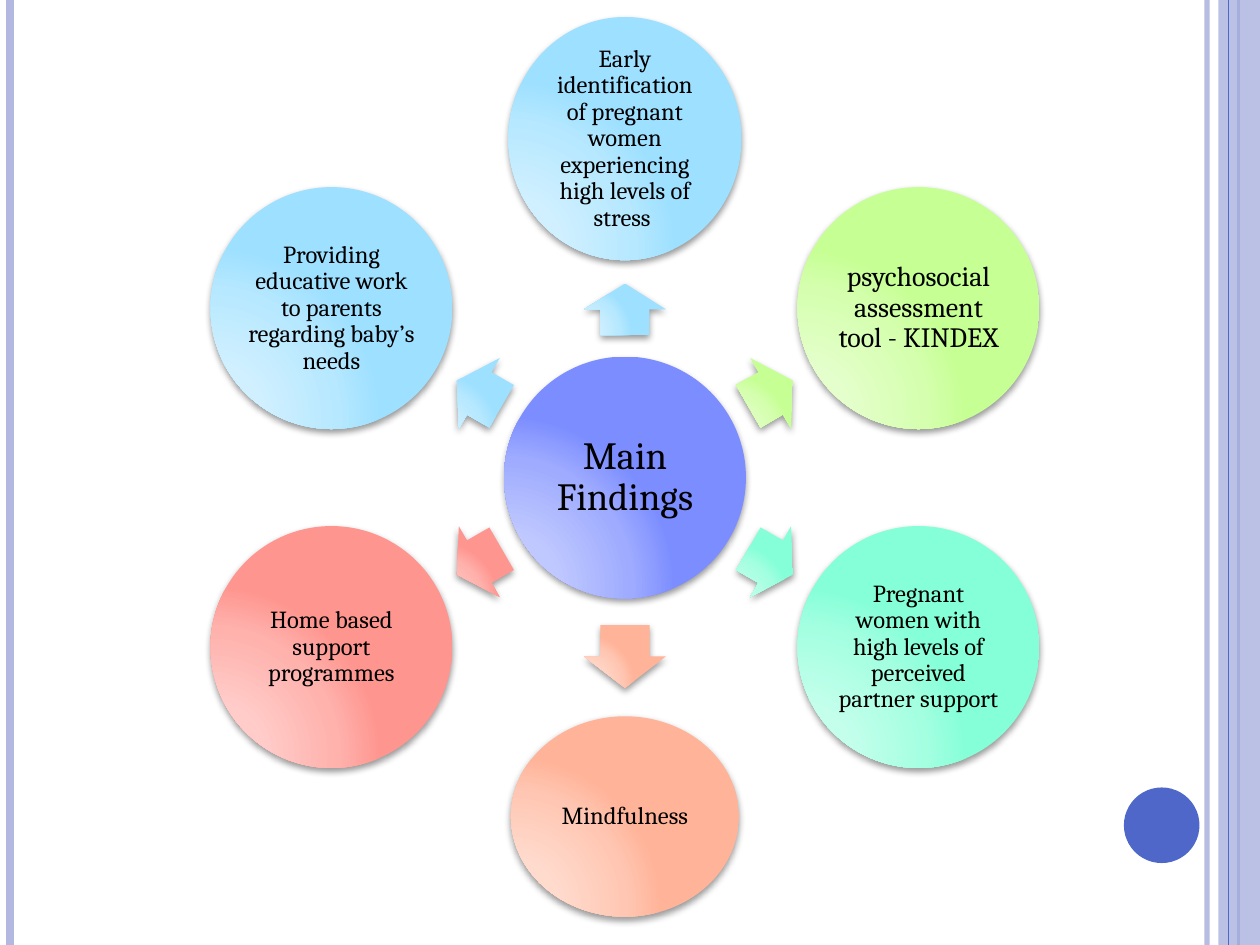
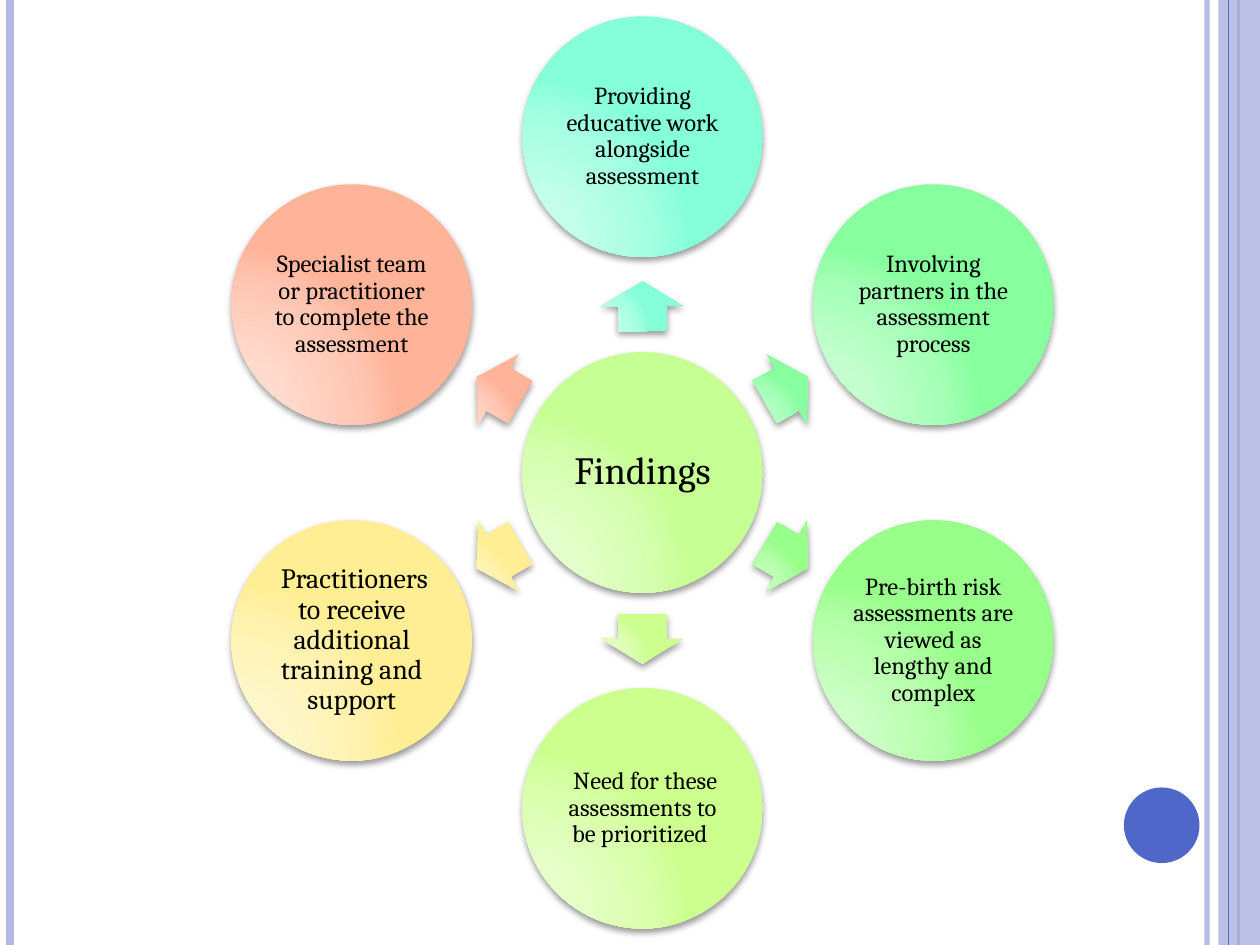
from dataclasses import dataclass
from math import cos, radians, sin

from lxml.etree import SubElement
from pptx import Presentation
from pptx.dml.color import RGBColor
from pptx.enum.shapes import MSO_CONNECTOR as Link, MSO_SHAPE as Form
from pptx.enum.text import MSO_ANCHOR as Anchor, PP_ALIGN as Align
from pptx.oxml import parse_xml
from pptx.oxml.ns import nsdecls, qn
from pptx.util import Emu, Inches, Pt

# Grid of 100 columns by 75 rows
COLS, ROWS = 100, 75
CELL = Inches(0.1)

# Shared look
PALE, BLUE = "B2B8E0", "4E67C8"
SKY, LIME, MINT = "9DE0FF", "C6FF93", "84FFD7"
PEACH, ROSE, IRIS = "FFB398", "FF958F", "7C8EFF"
LEAF, GREEN, PEAR, SAND = "87FF9E", "98FF8A", "CCFF8E", "FFEE93"
TINTS = {0: 0.44, 30: 0.48, 75: 0.74, 100: 1}
INNER = 0.71  # text area as a share of its circle
FRAME = {"word_wrap": True, "vertical_anchor": Anchor.MIDDLE}
SIDES = ("left", "right", "top", "bottom")
PARA = {"alignment": Align.CENTER, "line_spacing": 0.9}


@dataclass
class Rule:
    col: float
    width: float
    color: str
    alpha: int = 100


@dataclass
class Node:
    """A circle on the ring; zero sizes mean the ring's own."""
    text: str
    color: str
    size: int = 14
    wide: float = 0
    high: float = 0
    shaft: float = 0
    reach: float = 0
    lead: str = ""


@dataclass
class Ring:
    col: float
    row: float
    disc: float
    orbit: float
    reach: float
    shaft: float
    hub: Node
    nodes: list[Node]


RULES = [Rule(95.8, 3, PALE, 93), Rule(0.8, 4.5, PALE), Rule(98.3, 1.5, BLUE)]
EDGE = Rule(97.5, 0.75, BLUE)

RINGS = [
    Ring(49.6, 37.9, 19.2, 26.9, 13.35, 4.1, Node("Main Findings", IRIS, 22), [
        Node("Early identification of pregnant women experiencing high levels "
             "of stress ", SKY, wide=18.5, high=19.3),
        Node("psychosocial assessment tool - KINDEX", LIME, 16),
        Node("Pregnant women with high levels of perceived partner support",
             MINT),
        Node("Mindfulness", PEACH, wide=18.1, high=15.9, shaft=5, reach=14.2),
        Node("Home based support programmes", ROSE),
        Node("Providing educative work to parents regarding baby’s needs", SKY),
    ]),
    Ring(51, 37.5, 19.1, 26.65, 13.2, 4, Node("Findings", LIME, 22), [
        Node("Providing educative work alongside assessment", MINT),
        Node("Involving partners in the assessment process", LEAF),
        Node("Pre-birth risk assessments are viewed as lengthy and complex",
             GREEN),
        Node(" Need for these assessments to be prioritized ", PEAR),
        Node("Practitioners to receive additional training and support", SAND,
             16, lead=" "),
        Node("Specialist team or practitioner to complete the assessment",
             PEACH),
    ]),
]


def grid(*cells: float) -> list[Emu]:
    return [Emu(round(n * CELL)) for n in cells]


def rgb(color: str) -> RGBColor:
    return RGBColor.from_string(color)


def tint(color: str, share: float) -> str:
    return "".join(f"{round(255 - (255 - n) * share):02X}" for n in rgb(color))


def fade(fill, alpha: int) -> None:
    if alpha < 100:
        tone = fill._xPr.find(".//" + qn("a:srgbClr"))
        SubElement(tone, qn("a:alpha"), val=str(alpha * 1000))


# Page frame
def rule(slide, item: Rule) -> None:
    line = slide.shapes.add_connector(
        Link.STRAIGHT, *grid(item.col, 0, item.col, ROWS))
    line.line.width = Pt(item.width)
    line.line.fill.solid()
    line.line.color.rgb = rgb(item.color)
    fade(line.line.fill, item.alpha)
    SubElement(line._element.spPr, qn("a:effectLst"))


def flat(slide, form: Form, box: tuple, color: str, alpha: int = 100) -> None:
    shape = slide.shapes.add_shape(form, *grid(*box))
    shape.shadow.inherit = False
    shape.fill.solid()
    shape.fill.fore_color.rgb = rgb(color)
    fade(shape.fill, alpha)
    shape.line.fill.background()


def frame(slide) -> None:
    for item in RULES:
        rule(slide, item)
    flat(slide, Form.RECTANGLE, (96.7, 0, COLS - 96.7, ROWS), PALE, 87)
    rule(slide, EDGE)
    flat(slide, Form.OVAL, (89.2, 62.5, 6, 6), BLUE)


# Diagram parts
def glossy(slide, form: Form, mid: tuple, wide: float, high: float,
           color: str):
    box = grid(mid[0] - wide / 2, mid[1] - high / 2, wide, high)
    shape = slide.shapes.add_shape(form, *box)
    stops = "".join(
        f'<a:gs pos="{pos * 1000}"><a:srgbClr val="{tint(color, share)}"/></a:gs>'
        for pos, share in TINTS.items())
    props = shape._element.spPr
    props.append(parse_xml(
        f'<a:gradFill {nsdecls("a")} rotWithShape="1"><a:gsLst>{stops}</a:gsLst>'
        '<a:path path="circle"><a:fillToRect l="5000" t="100000" r="120000" '
        'b="10000"/></a:path></a:gradFill>'))
    shape.line.fill.background()
    props.append(parse_xml(
        f'<a:effectLst {nsdecls("a")}><a:outerShdw blurRad="{Pt(4)}" '
        f'dist="{Pt(2)}" dir="5400000" rotWithShape="0"><a:srgbClr val="000000">'
        '<a:alpha val="40000"/></a:srgbClr></a:outerShdw></a:effectLst>'))
    return shape


def label(slide, mid: tuple, wide: float, high: float, node: Node) -> None:
    wide, high = wide * INNER, high * INNER
    box = grid(mid[0] - wide / 2, mid[1] - high / 2, wide, high)
    text = slide.shapes.add_textbox(*box).text_frame
    for key, value in FRAME.items():
        setattr(text, key, value)
    for side in SIDES:
        setattr(text, f"margin_{side}", Inches(0.03 if node.size > 20 else 0.02))
    para = text.paragraphs[0]
    for key, value in PARA.items():
        setattr(para, key, value)
    after = SubElement(para._p.get_or_add_pPr(), qn("a:spcAft"))
    SubElement(after, qn("a:spcPct"), val="35000")
    for words, size in ((node.lead, 14), (node.text, node.size)):
        if words:
            run = para.add_run()
            run.text = words
            for key, value in {"name": "Cambria", "size": Pt(size)}.items():
                setattr(run.font, key, value)
            run.font.color.rgb = rgb("000000")


def disc(slide, mid: tuple, node: Node, size: float) -> None:
    wide, high = node.wide or size, node.high or size
    glossy(slide, Form.OVAL, mid, wide, high, node.color)
    label(slide, mid, wide, high, node)


def draw(slide, ring: Ring) -> None:
    disc(slide, (ring.col, ring.row), ring.hub, ring.disc)
    for i, node in enumerate(ring.nodes):
        turn = i * 360 / len(ring.nodes) - 90

        def spot(far: float) -> tuple:
            return (ring.col + far * cos(radians(turn)),
                    ring.row + far * sin(radians(turn)))

        arrow = glossy(slide, Form.RIGHT_ARROW, spot(node.reach or ring.reach),
                       node.shaft or ring.shaft, 6.5, node.color)
        arrow.adjustments[0], arrow.adjustments[1] = 0.6, 0.5
        arrow.rotation = turn % 360
        disc(slide, spot(ring.orbit), node, ring.disc)


def main() -> None:
    deck = Presentation()
    deck.slide_width, deck.slide_height = grid(COLS, ROWS)
    for ring in RINGS:
        slide = deck.slides.add_slide(deck.slide_layouts[6])
        frame(slide)
        draw(slide, ring)
    deck.save("out.pptx")


if __name__ == "__main__":
    main()
